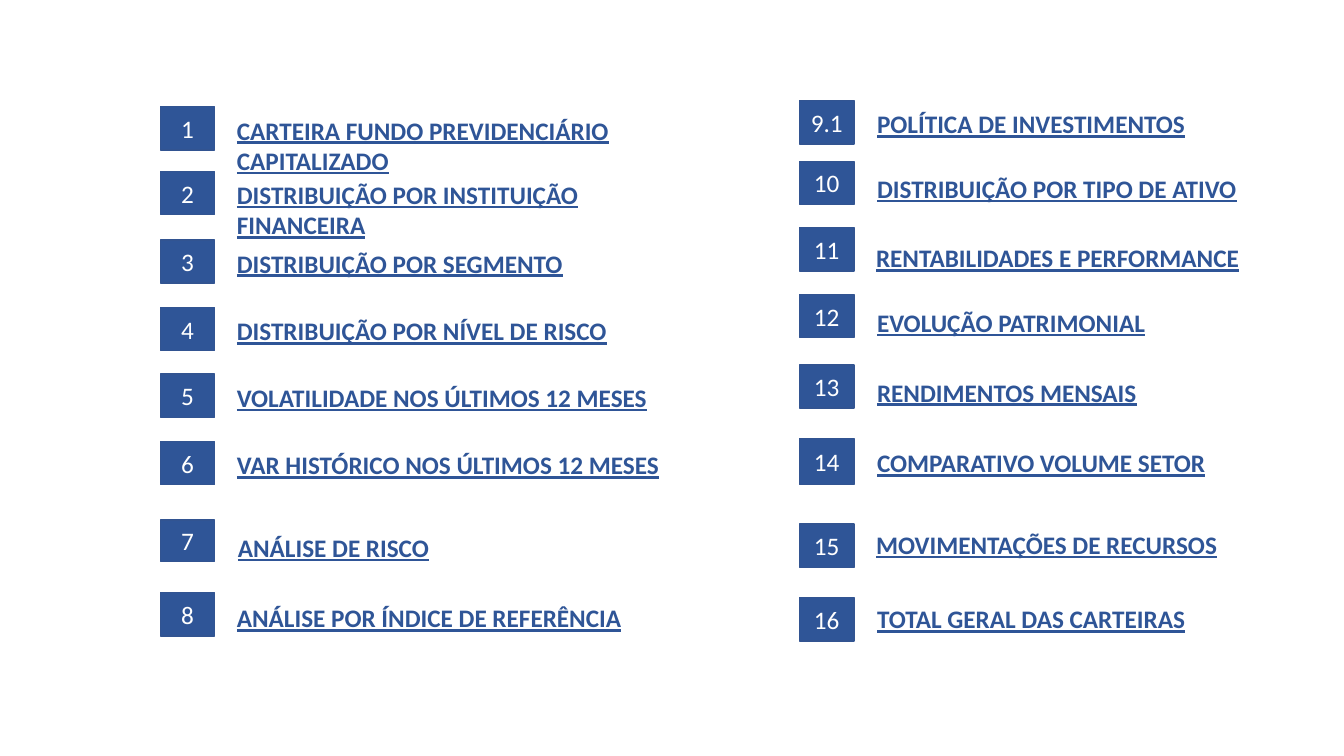
from pptx import Presentation
from pptx import util as u
from pptx.dml.color import RGBColor
from pptx.enum import shapes, text

PX = u.Inches(1) // 100
COLORS = {"blue": "2F5597", "outline": "325491", "white": "FFFFFF"}
BADGE_WIDTH, BADGE_HEIGHT = 54, 43
LABEL_WIDTH, LINE_HEIGHT = 442, 40

# Number, badge top, label top, label; then any exceptions to the standard row.
LEFT_ITEMS = [
    ("1", 106, 109, "CARTEIRA FUNDO PREVIDENCIÁRIO CAPITALIZADO", {"label_height": 71}),
    ("2", 170, 173, "DISTRIBUIÇÃO POR INSTITUIÇÃO FINANCEIRA", {"label_height": 71}),
    ("3", 238, 241, "DISTRIBUIÇÃO POR SEGMENTO", {}),
    ("4", 305, 308, "DISTRIBUIÇÃO POR NÍVEL DE RISCO", {}),
    ("5", 371, 374, "VOLATILIDADE NOS ÚLTIMOS 12 MESES", {}),
    ("6", 438, 441, "VAR HISTÓRICO NOS ÚLTIMOS 12 MESES", {}),
    ("7", 516, 523, "ANÁLISE DE RISCO", {"shift": 1, "badge_height": 41}),
    ("8", 588, 593, "ANÁLISE POR ÍNDICE DE REFERÊNCIA", {}),
]
RIGHT_ITEMS = [
    ("9.1", 100, 103, "POLÍTICA DE INVESTIMENTOS", {}),
    ("10", 160, 167, "DISTRIBUIÇÃO POR TIPO DE ATIVO", {}),
    ("11", 226, 236, "RENTABILIDADES E PERFORMANCE", {"shift": -1}),
    ("12", 292, 300, "EVOLUÇÃO PATRIMONIAL", {}),
    ("13", 362, 369, "RENDIMENTOS MENSAIS", {}),
    ("14", 435, 439, "COMPARATIVO VOLUME SETOR", {"badge_height": 46}),
    ("15", 520, 520, "MOVIMENTAÇÕES DE RECURSOS", {"shift": -1}),
    ("16", 593, 594, "TOTAL GERAL DAS CARTEIRAS", {}),
]


def color(name):
    return RGBColor.from_string(COLORS[name])


def px(*lengths):
    return [length * PX for length in lengths]


def write(shape, words, color_name):
    """Fill the shape with one 18 pt paragraph and return that paragraph."""
    shape.text_frame.word_wrap = True
    paragraph = shape.text_frame.paragraphs[0]
    paragraph.text = words
    font = paragraph.font
    font.name, font.size = "Calibri", u.Pt(18)
    font.color.rgb = color(color_name)
    return paragraph


def add_badge(slide, number, left, top, height):
    badge = slide.shapes.add_shape(
        shapes.MSO_SHAPE.RECTANGLE, *px(left, top, BADGE_WIDTH, height))
    badge.shadow.inherit = False
    badge.fill.solid()
    badge.fill.fore_color.rgb = color("blue")
    badge.line.color.rgb = color("outline")
    badge.line.width = u.Pt(1)
    badge.text_frame.vertical_anchor = text.MSO_ANCHOR.MIDDLE
    write(badge, number, "white").alignment = text.PP_ALIGN.CENTER


def add_label(slide, words, left, top, height):
    label = slide.shapes.add_textbox(*px(left, top, LABEL_WIDTH, height))
    label.text_frame.auto_size = text.MSO_AUTO_SIZE.SHAPE_TO_FIT_TEXT
    font = write(label, words, "blue").font
    font.bold = font.underline = True


def add_index_column(slide, items, left, label_offset):
    for number, badge_top, label_top, words, exceptions in items:
        add_badge(slide, number, left, badge_top,
                  exceptions.get("badge_height", BADGE_HEIGHT))
        add_label(slide, words, left + label_offset + exceptions.get("shift", 0),
                  label_top, exceptions.get("label_height", LINE_HEIGHT))


def main():
    presentation = Presentation()
    presentation.slide_width, presentation.slide_height = px(1333, 750)
    slide = presentation.slides.add_slide(presentation.slide_layouts[6])
    add_index_column(slide, LEFT_ITEMS, left=159, label_offset=66)
    add_index_column(slide, RIGHT_ITEMS, left=793, label_offset=67)
    presentation.save("out.pptx")


if __name__ == "__main__":
    main()
